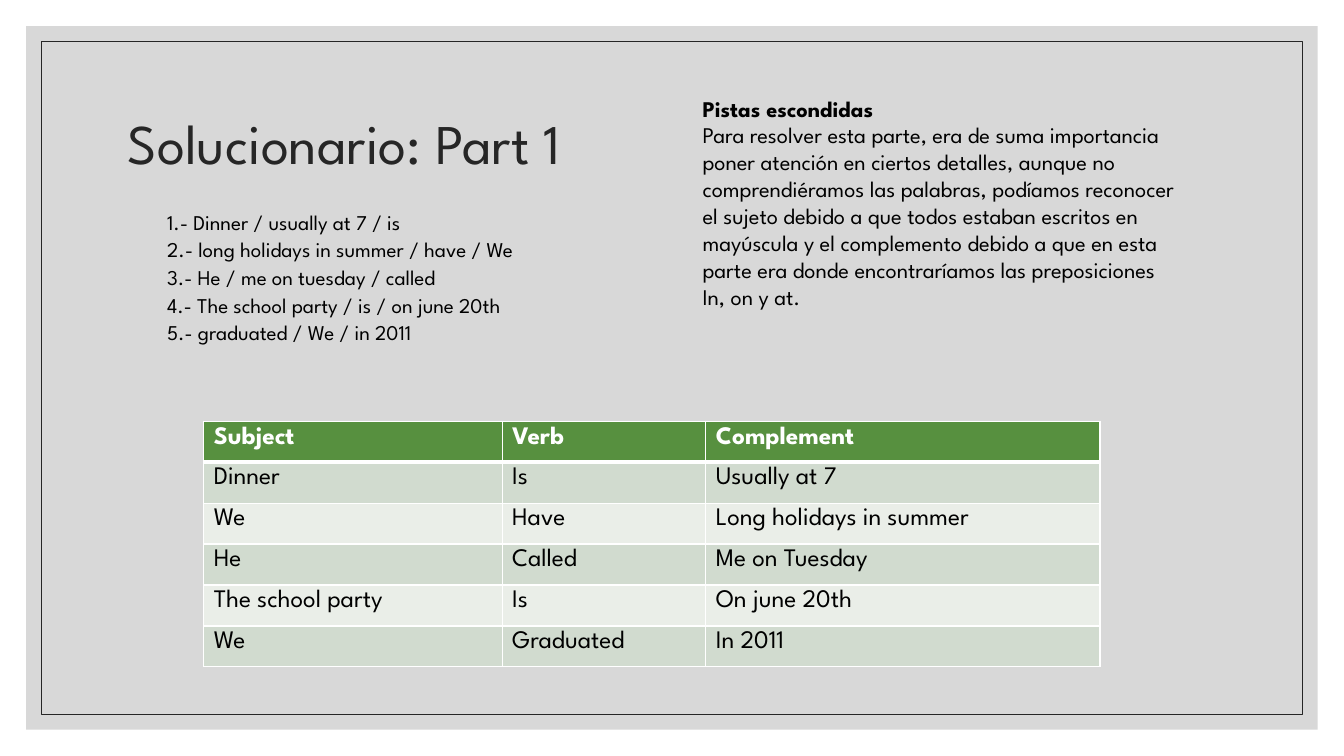
from dataclasses import dataclass

from lxml import etree
from pptx import Presentation
from pptx.dml.color import RGBColor
from pptx.enum.shapes import MSO_SHAPE
from pptx.enum.text import MSO_ANCHOR
from pptx.oxml.ns import qn
from pptx.util import Inches, Pt

RECTANGLE = MSO_SHAPE.RECTANGLE
TOP, MIDDLE = MSO_ANCHOR.TOP, MSO_ANCHOR.MIDDLE

FONT = "League Spartan"
BLACK, WHITE, CHARCOAL = "000000", "FFFFFF", "262626"
GREY, GREEN = "BFBFBF", "57903F"
BANDS = ("D1DBCF", "EAEEE8")


@dataclass
class Line:
    text: str
    bold: bool = False


@dataclass
class TextBlock:
    left: float
    top: float
    width: float
    height: float
    lines: list[Line]
    size: float
    color: str = BLACK
    spacing: float = 1.0
    anchor: int = TOP


@dataclass
class Panel:
    margin: float
    fill: str | None = None
    opacity: int = 100
    line: str | None = None


PANELS = [Panel(0.26, fill=GREY, opacity=60), Panel(0.41, line=CHARCOAL)]

TEXT_BLOCKS = [
    TextBlock(1.17, 0.7, 11, 1.5, [Line("Solucionario: Part 1")], 40,
              CHARCOAL, 0.9, MIDDLE),
    TextBlock(1.56, 2, 4.57, 3, [
        Line("1.- Dinner / usually at 7 / is"),
        Line("2.- long holidays in summer / have / We"),
        Line("3.- He / me on tuesday / called"),
        Line("4.- The school party / is / on june 20th"),
        Line("5.- graduated / We / in 2011"),
    ], 15, spacing=1.1),
    TextBlock(6.87, 0.89, 4.9, 2.79, [
        Line("Pistas escondidas", bold=True),
        Line("Para resolver esta parte, era de suma importancia poner atención "
             "en ciertos detalles, aunque no comprendiéramos las palabras, "
             "podíamos reconocer el sujeto debido a que todos estaban escritos "
             "en mayúscula y el complemento debido a que en esta parte era "
             "donde encontraríamos las preposiciones In, on y at."),
    ], 16),
]

ANSWERS = [
    ("Subject", "Verb", "Complement"),
    ("Dinner", "Is", "Usually at 7"),
    ("We", "Have", "Long holidays in summer"),
    ("He", "Called", "Me on Tuesday"),
    ("The school party", "Is", "On june 20th"),
    ("We", "Graduated", "In 2011"),
]
COLUMN_WIDTHS = (2.96, 2.02, 3.91)
ROW_HEIGHT = 0.406


def rgb(color: str) -> RGBColor:
    return RGBColor.from_string(color)


def add_run(paragraph, text: str, size: float, color: str, bold: bool) -> None:
    run = paragraph.add_run()
    run.text = text
    run.font.name = FONT
    run.font.size = Pt(size)
    run.font.bold = bold
    run.font.color.rgb = rgb(color)


def add_panel(slide, panel: Panel, width: float, height: float) -> None:
    shape = slide.shapes.add_shape(
        RECTANGLE, Inches(panel.margin), Inches(panel.margin),
        Inches(width - 2 * panel.margin), Inches(height - 2 * panel.margin))
    shape.shadow.inherit = False
    if panel.fill:
        shape.fill.solid()
        shape.fill.fore_color.rgb = rgb(panel.fill)
        tint = shape.fill._xPr.find(f".//{qn('a:srgbClr')}")
        etree.SubElement(tint, qn("a:alpha"), val=str(panel.opacity * 1000))
    else:
        shape.fill.background()
    if panel.line:
        shape.line.color.rgb = rgb(panel.line)
        shape.line.width = Pt(0.5)
    else:
        shape.line.fill.background()


def add_text_block(slide, block: TextBlock) -> None:
    frame = slide.shapes.add_textbox(
        Inches(block.left), Inches(block.top),
        Inches(block.width), Inches(block.height)).text_frame
    frame.word_wrap = True
    frame.vertical_anchor = block.anchor
    for index, line in enumerate(block.lines):
        paragraph = frame.add_paragraph() if index else frame.paragraphs[0]
        paragraph.line_spacing = block.spacing
        add_run(paragraph, line.text, block.size, block.color, line.bold)


def add_borders(cell, top: float, bottom: float) -> None:
    properties = cell._tc.get_or_add_tcPr()
    for side, width in (("L", 1), ("R", 1), ("T", top), ("B", bottom)):
        border = etree.SubElement(properties, qn(f"a:ln{side}"), w=str(Pt(width)))
        fill = etree.SubElement(border, qn("a:solidFill"))
        etree.SubElement(fill, qn("a:srgbClr"), val=WHITE)


def add_answer_table(slide, left: float, top: float) -> None:
    table = slide.shapes.add_table(
        len(ANSWERS), len(COLUMN_WIDTHS), Inches(left), Inches(top),
        Inches(sum(COLUMN_WIDTHS)), Inches(ROW_HEIGHT * len(ANSWERS))).table
    for column, width in zip(table.columns, COLUMN_WIDTHS):
        column.width = Inches(width)
    for index, answer in enumerate(ANSWERS):
        table.rows[index].height = Inches(ROW_HEIGHT)
        header = index == 0
        for position, text in enumerate(answer):
            cell = table.cell(index, position)
            # Thick rule between the header and the first answer
            add_borders(cell, 3 if index == 1 else 1, 3 if header else 1)
            cell.fill.solid()
            cell.fill.fore_color.rgb = rgb(GREEN if header else BANDS[(index - 1) % 2])
            add_run(cell.text_frame.paragraphs[0], text, 18,
                    WHITE if header else BLACK, header)


def main() -> None:
    width, height = 13.33, 7.5
    presentation = Presentation()
    presentation.slide_width = Inches(width)
    presentation.slide_height = Inches(height)
    slide = presentation.slides.add_slide(presentation.slide_layouts[6])

    # Backdrop and frame
    for panel in PANELS:
        add_panel(slide, panel, width, height)

    # Title, exercise list and hints
    for block in TEXT_BLOCKS:
        add_text_block(slide, block)

    # Solved sentences
    add_answer_table(slide, 2.02, 4.18)

    presentation.save("out.pptx")


if __name__ == "__main__":
    main()
